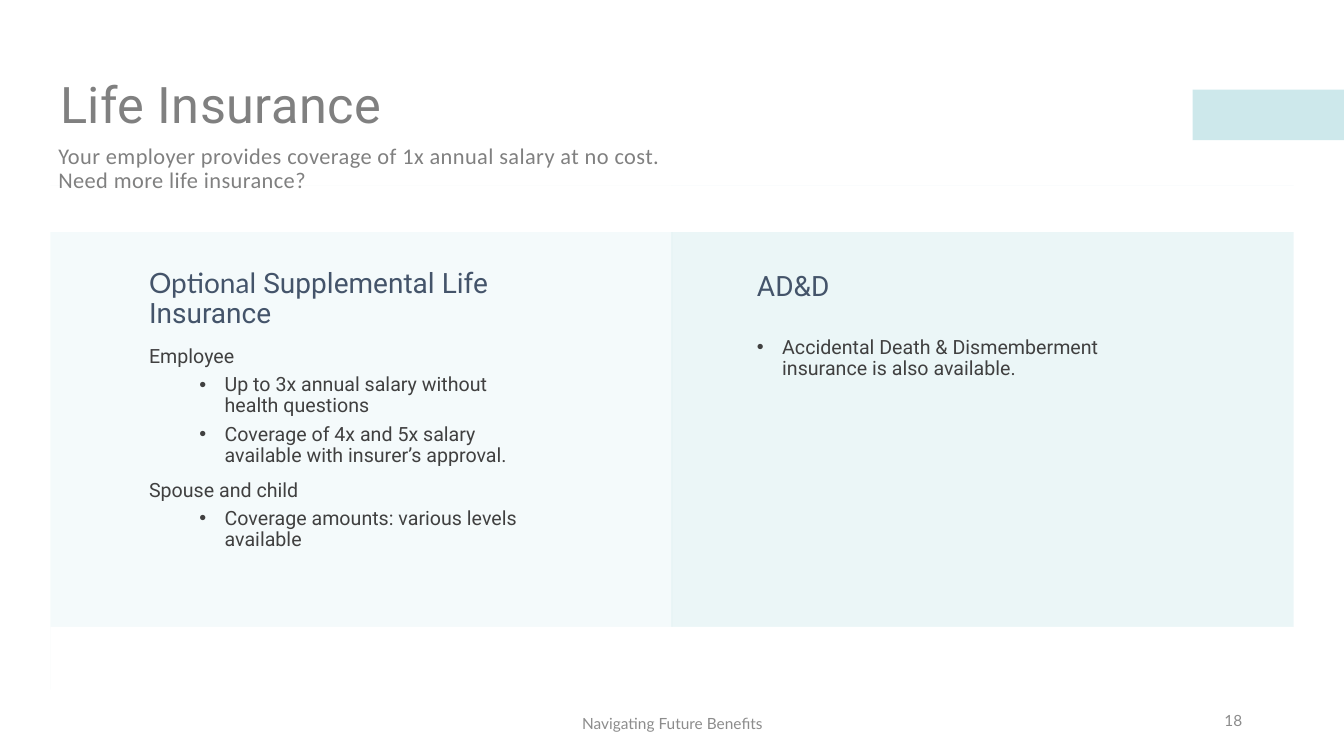
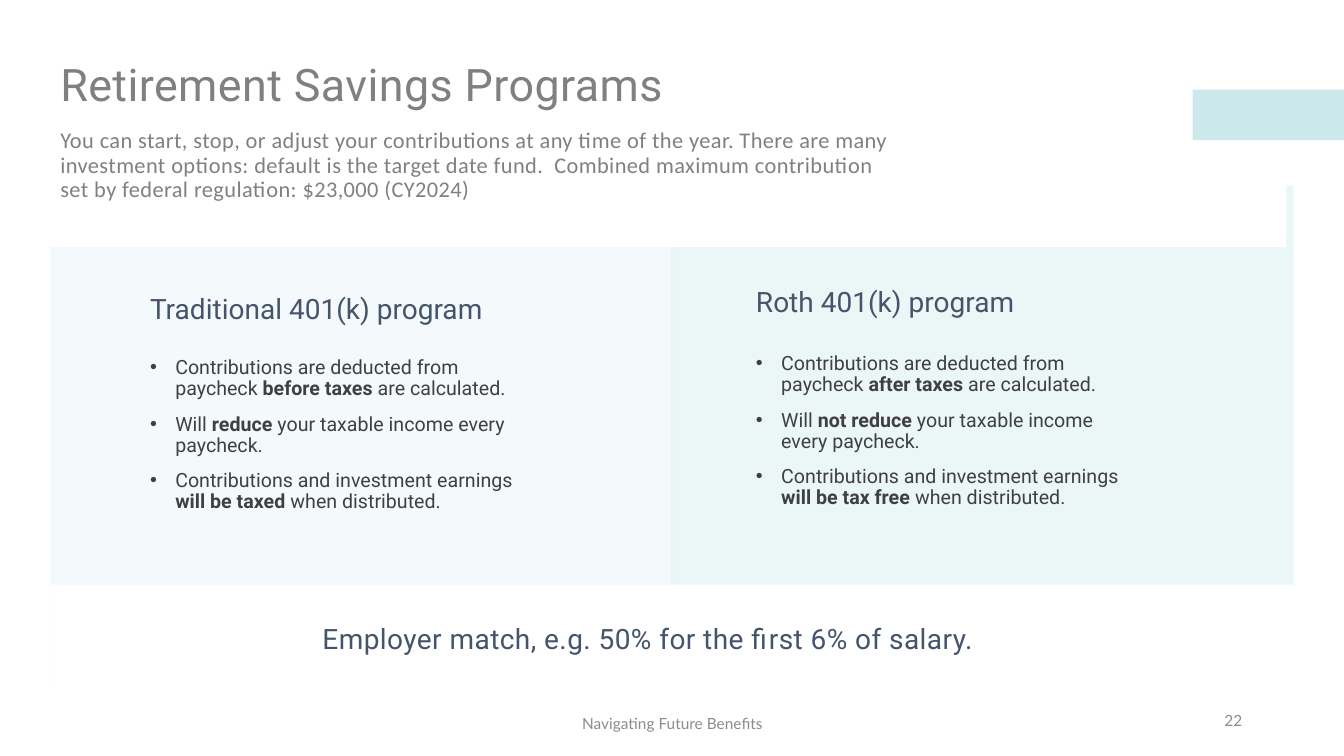
from pptx import Presentation
from pptx.dml.color import RGBColor
from pptx.enum.shapes import MSO_SHAPE
from pptx.enum.text import MSO_ANCHOR, PP_ALIGN
from pptx.oxml.ns import qn
from pptx.util import Inches, Pt
from lxml.etree import SubElement

TEAL = RGBColor(0x9C, 0xD3, 0xD9)
WHITE = RGBColor(0xFF, 0xFF, 0xFF)
NAVY = RGBColor(0x44, 0x54, 0x6A)
DARK = RGBColor(0x40, 0x40, 0x40)
GRAY = RGBColor(0x80, 0x80, 0x80)
FOOTER_GRAY = RGBColor(0x8C, 0x8C, 0x8C)

PANEL_LEFT, PANEL_TOP, PANEL_WIDTH, PANEL_HEIGHT = 0.5, 1.84, 6.17, 5
COLUMN_WIDTH, BODY_HEIGHT, HEADING_HEIGHT = 4, 4.03, 0.9


class BenefitsDeck:
    """Holds the shared style and the slide being built."""

    def __init__(self):
        self.presentation = Presentation()
        self.presentation.slide_width = Inches(13.33)
        self.presentation.slide_height = Inches(7.5)
        self.slide = None

    def new_slide(self, number, covers):
        """Start a slide; white covers trim the two panels at top and bottom."""
        self.slide = self.presentation.slides.add_slide(
            self.presentation.slide_layouts[6])
        self.rectangle(11.83, 0.89, 1.5, 0.5, TEAL, 50)
        for left, opacity in ((PANEL_LEFT + PANEL_WIDTH - 0.01, 20), (PANEL_LEFT, 10)):
            self.rectangle(left, PANEL_TOP, PANEL_WIDTH, PANEL_HEIGHT, TEAL, opacity)
        for cover in covers:
            self.rectangle(*cover, WHITE)
        for text, box, align in (
                ("Navigating Future Benefits", (4.42, 6.98, 4.5, 0.4), PP_ALIGN.CENTER),
                (str(number), (9.42, 6.95, 3, 0.4), PP_ALIGN.RIGHT)):
            frame = self.text_box(*box)
            paragraph = self.paragraph(frame, line_spacing=1)
            paragraph.alignment = align
            self.run(paragraph, text, 11, FOOTER_GRAY, "Lato")

    def rectangle(self, left, top, width, height, color, opacity=100):
        shape = self.slide.shapes.add_shape(
            MSO_SHAPE.RECTANGLE, Inches(left), Inches(top), Inches(width), Inches(height))
        shape.shadow.inherit = False
        shape.fill.solid()
        shape.fill.fore_color.rgb = color
        shape.line.fill.background()
        if opacity < 100:
            fill_color = shape.element.spPr.find(qn("a:solidFill")).find(qn("a:srgbClr"))
            SubElement(fill_color, qn("a:alpha"), val=str(opacity * 1000))

    def text_box(self, left, top, width, height, anchor=MSO_ANCHOR.MIDDLE):
        box = self.slide.shapes.add_textbox(
            Inches(left), Inches(top), Inches(width), Inches(height))
        frame = box.text_frame
        frame.word_wrap = True
        frame.vertical_anchor = anchor
        return frame

    def paragraph(self, frame, space_before=0, line_spacing=0.9, indent=None):
        """Return the next paragraph; a given indent makes it a bullet."""
        first = not frame.paragraphs[0].runs
        paragraph = frame.paragraphs[0] if first else frame.add_paragraph()
        if indent is not None:
            properties = paragraph._p.get_or_add_pPr()
            properties.set("marL", str(Inches(indent)))
            properties.set("indent", str(Inches(-0.25)))
            SubElement(properties, qn("a:buFont"), typeface="Arial")
            SubElement(properties, qn("a:buChar"), char="•")
        paragraph.line_spacing = line_spacing
        paragraph.space_before = Pt(0 if first else space_before)
        return paragraph

    def run(self, paragraph, text, size, color, font="Roboto", bold=False, spacing=0):
        run = paragraph.add_run()
        run.text = text
        run.font.size = Pt(size)
        run.font.name = font
        run.font.bold = bold
        run.font.color.rgb = color
        if spacing:
            run.font._element.set("spc", str(round(spacing * 100)))

    def spaced_text(self, box, lines, size, color=GRAY, font="Roboto"):
        """Write slightly letter-spaced lines, as in titles and statements."""
        frame = self.text_box(*box)
        for line in lines:
            self.run(self.paragraph(frame), line, size, color, font, spacing=0.3)

    def title(self, text, top, size):
        self.spaced_text((0.5, top, 11.5, 1.45), [text], size)

    def subtitle(self, lines, left, top, width):
        self.spaced_text((left, top, width, 1.45), lines, 16, font="Calibri")

    def column(self, left, top, heading, items, heading_lead=""):
        """Add a heading and its items: (indent or None, space before, text).

        Text between asterisks is bold; heading_lead is set in Lato.
        """
        paragraph = self.paragraph(
            self.text_box(left, top, COLUMN_WIDTH, HEADING_HEIGHT))
        if heading_lead:
            self.run(paragraph, heading_lead, 20, NAVY, "Lato")
        self.run(paragraph, heading, 20, NAVY)
        body = self.text_box(left, top + HEADING_HEIGHT - 0.03 * bool(left < PANEL_WIDTH),
                             COLUMN_WIDTH, BODY_HEIGHT, MSO_ANCHOR.TOP)
        for indent, space_before, text in items:
            paragraph = self.paragraph(body, space_before, indent=indent)
            for index, part in enumerate(text.split("*")):
                if part:
                    self.run(paragraph, part, 14, DARK, bold=index % 2 == 1)


def label(text):
    return None, 10, text


def bullet(text):
    return 0.25, 10, text


def sub_bullet(text):
    return 0.75, 5, text


def life_insurance(deck):
    deck.new_slide(18, [(0.42, 1.84, 12.66, 0.46), (0.5, 6.22, 12.52, 0.76)])
    deck.title("Life Insurance", 0.34, 36)
    deck.subtitle(["Your employer provides coverage of 1x annual salary at no cost.",
                   "Need more life insurance?"], 0.48, 0.95, 8.31)
    deck.column(1.38, 2.52, "Supplemental Life Insurance", [
        label("Employee"),
        sub_bullet("Up to 3x annual salary without health questions"),
        sub_bullet("Coverage of 4x and 5x salary available with insurer’s approval."),
        label("Spouse and child"),
        sub_bullet("Coverage amounts: various levels available"),
    ], heading_lead="Optional ")
    deck.column(7.41, 2.4, "AD&D", [
        bullet("Accidental Death & Dismemberment insurance is also available."),
    ])


def retirement_savings(deck):
    deck.new_slide(22, [(0.5, 5.8, 12.52, 1.18), (0.36, 1.82, 12.4, 0.63)])
    deck.title("Retirement Savings Programs", 0.14, 32)
    deck.subtitle(["You can start, stop, or adjust your contributions at any time of the "
                   "year. There are many investment options: default is the target date "
                   "fund.  Combined maximum contribution set by federal regulation: "
                   "$23,000 (CY2024)"], 0.5, 0.92, 8.51)
    programs = (
        (1.39, 2.63, "Traditional", "before taxes", "reduce", "will be taxed"),
        (7.4, 2.56, "Roth", "after taxes", "not reduce", "will be tax free"),
    )
    for left, top, name, timing, effect, outcome in programs:
        deck.column(left, top, f"{name} 401(k) program", [
            bullet(f"Contributions are deducted from paycheck *{timing} *are calculated."),
            bullet(f"Will *{effect}* your taxable income every paycheck."),
            bullet(f"Contributions and investment earnings *{outcome} *when distributed."),
        ])
    deck.spaced_text((3.1, 5.4, 8.1, 1.9),
                     ["Employer match, e.g. 50% for the first 6% of salary."], 20, NAVY)


def main():
    deck = BenefitsDeck()
    life_insurance(deck)
    retirement_savings(deck)
    deck.presentation.save("out.pptx")


if __name__ == "__main__":
    main()
